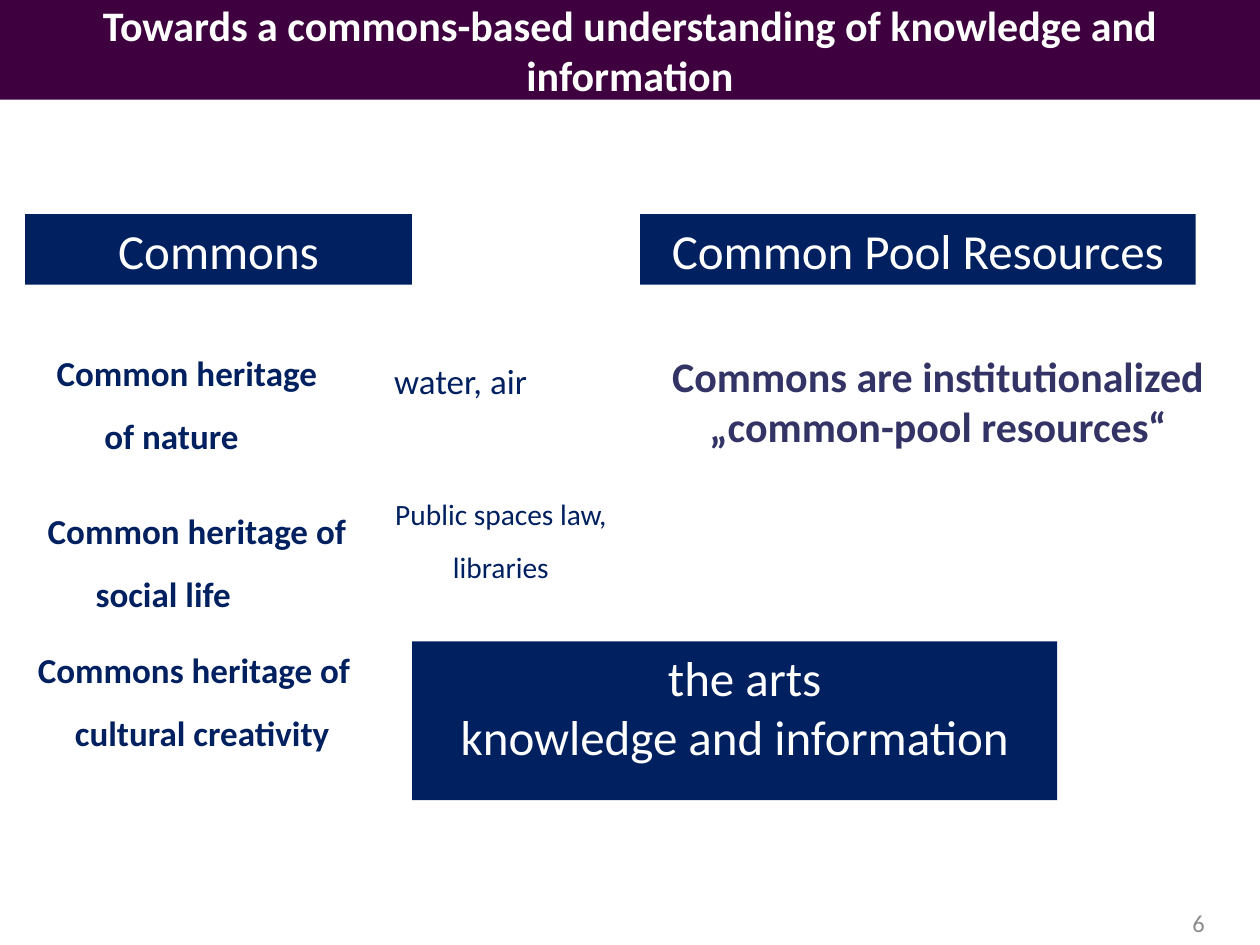
from pptx import Presentation
from pptx.dml.color import RGBColor
from pptx.enum.shapes import MSO_SHAPE as SHAPE
from pptx.enum.text import MSO_ANCHOR as ANCHOR, MSO_AUTO_SIZE as AUTO, PP_ALIGN as ALIGN
from pptx.util import Inches, Pt

NAVY, PLUM, INDIGO, GREY, WHITE = "002060", "3E003E", "333366", "8C8C8C", "FFFFFF"


def color(value):
    """Return the colour for a hex string."""
    return RGBColor.from_string(value)


def place(sp, left, top, width, height):
    """Set the position and size of a shape in inches."""
    sp.left, sp.top = Inches(left), Inches(top)
    sp.width, sp.height = Inches(width), Inches(height)


def style(p, size, ink, bold=False, align=ALIGN.LEFT, spacing=None):
    """Format a whole paragraph."""
    p.alignment = align
    p.line_spacing = spacing
    p.font.name, p.font.size, p.font.bold = "Calibri", Pt(size), bold
    p.font.color.rgb = color(ink)


def indent(p, margin, first=0.0):
    """Set the left margin and first-line indent of a paragraph in inches."""
    pPr = p._p.get_or_add_pPr()
    pPr.set("marL", str(Inches(margin)))
    pPr.set("indent", str(Inches(first)))


def add_title(s, text):
    """Turn the title placeholder into the full-width title bar."""
    sp = s.shapes.title
    place(sp, 0, 0, 10, 0.79)
    sp.fill.solid()
    sp.fill.fore_color.rgb = color(PLUM)
    tf = sp.text_frame
    tf.text = text
    tf.word_wrap, tf.auto_size = True, AUTO.NONE
    tf.vertical_anchor = ANCHOR.MIDDLE
    tf.margin_left = tf.margin_top = tf.margin_right = tf.margin_bottom = 0
    style(tf.paragraphs[0], 24, WHITE, True, ALIGN.CENTER)


def add_panel(s, box, text):
    """Add a navy panel with centred white lines and return its text frame."""
    sp = s.shapes.add_shape(SHAPE.RECTANGLE, *map(Inches, box))
    sp.shadow.inherit = False
    sp.fill.solid()
    sp.fill.fore_color.rgb = color(NAVY)
    sp.line.fill.background()
    tf = sp.text_frame
    tf.text = text
    tf.vertical_anchor = ANCHOR.TOP
    for p in tf.paragraphs:
        style(p, 28, WHITE, align=ALIGN.CENTER)
    return tf


def add_text(s, box, text, size, ink=NAVY, **options):
    """Add a wrapped one-paragraph text box and return its text frame."""
    tf = s.shapes.add_textbox(*map(Inches, box)).text_frame
    tf.text = text
    tf.word_wrap = True
    style(tf.paragraphs[0], size, ink, **options)
    return tf


def add_heritage(s, box, text, first=-0.38, align=ALIGN.LEFT):
    """Add a bold heritage label with a hanging indent."""
    tf = add_text(s, box, text, 20, bold=True, align=align, spacing=1.5)
    indent(tf.paragraphs[0], 0.38, first)


def main():
    """Build the slide and save it."""
    prs = Presentation()
    prs.slide_width, prs.slide_height = Inches(10), Inches(7.5)
    s = prs.slides.add_slide(prs.slide_layouts[5])
    add_title(s, "Towards a commons-based understanding of knowledge and information")

    add_panel(s, (0.2, 1.7, 3.07, 0.56), "Commons")
    add_panel(s, (5.08, 1.7, 4.41, 0.56), "Common Pool Resources")
    arts = add_panel(s, (3.27, 5.09, 5.12, 1.26), "the arts\nknowledge and information")
    indent(arts.paragraphs[0], 0.16)

    add_heritage(s, (0.35, 2.57, 2.52, 1.02), "Common heritage of nature")
    add_heritage(s, (0.28, 3.83, 2.99, 1.02), "Common heritage of social life")
    add_heritage(s, (-0.12, 4.93, 3.07, 1.34), "Commons heritage of cultural creativity",
                 first=-0.13, align=ALIGN.CENTER)

    add_text(s, (3.03, 2.57, 1.89, 1.02), "water, air", 20, spacing=1.7)
    add_text(s, (3.03, 3.75, 1.89, 1.02), "Public spaces law, libraries", 16.8,
             align=ALIGN.CENTER, spacing=1.5)
    add_text(s, (5.16, 2.73, 4.57, 0.92),
             "Commons are institutionalized „common-pool resources“", 24, INDIGO,
             bold=True, align=ALIGN.CENTER)

    number = add_text(s, (7.33, 7.12, 2.33, 0.4), "6", 14, GREY, align=ALIGN.RIGHT)
    number.vertical_anchor = ANCHOR.MIDDLE
    prs.save("out.pptx")


if __name__ == "__main__":
    main()
